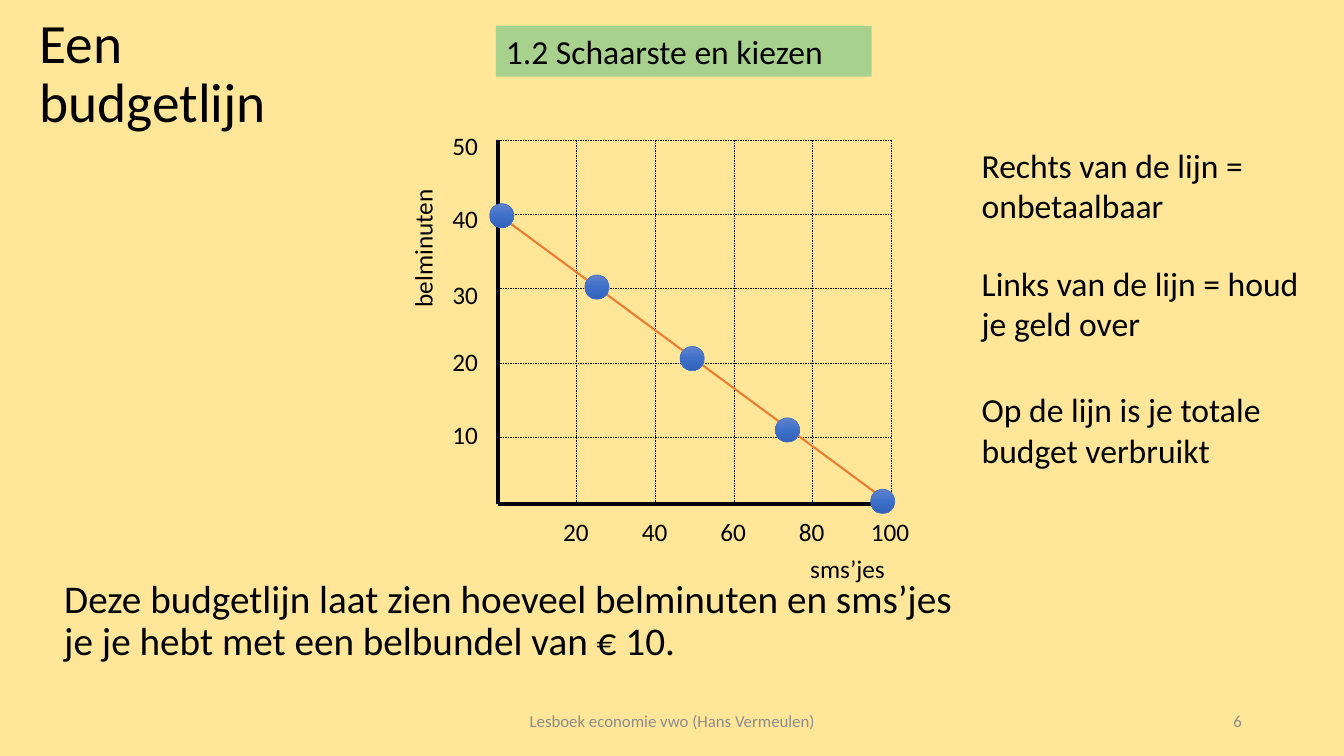
from copy import deepcopy

from lxml.etree import SubElement
from pptx import Presentation
from pptx.dml.color import RGBColor
from pptx.enum.dml import MSO_LINE
from pptx.enum.shapes import MSO_CONNECTOR, MSO_SHAPE
from pptx.enum.text import MSO_ANCHOR, MSO_AUTO_SIZE, PP_ALIGN
from pptx.oxml.ns import qn
from pptx.util import Cm, Pt

BLACK, GREY = "000000", "8C8C8C"

# Plot area of the budget line, in cm
LEFT, RIGHT, TOP, BOTTOM = 12.55, 22.45, 3.53, 12.7
COLUMN, ROW = 1.98, 1.87
LABEL_HEIGHT = 1.02


def colour(value):
    return RGBColor.from_string(value)


def apply(target, values):
    for name, value in values.items():
        setattr(target, name, value)


def write(shape, text, size, hue=BLACK, frame_format=None, para_format=None):
    frame = shape.text_frame
    apply(frame, {"word_wrap": True, "vertical_anchor": MSO_ANCHOR.TOP,
                  "auto_size": MSO_AUTO_SIZE.NONE, **(frame_format or {})})
    para = frame.paragraphs[0]
    apply(para, {"alignment": PP_ALIGN.LEFT, **(para_format or {})})
    span = para.add_run()
    span.text = text
    apply(span.font, {"name": "Calibri", "size": Pt(size)})
    span.font.color.rgb = colour(hue)


def add_text(shapes, place, text, size, hue=BLACK, frame_format=None, para_format=None):
    box = shapes.add_textbox(*map(Cm, place))
    write(box, text, size, hue, frame_format, para_format)
    return box


def add_label(shapes, left, top, width, text):
    return add_text(shapes, (left, top, width, LABEL_HEIGHT), text, 18,
                    frame_format={"word_wrap": False})


def add_line(shapes, start, end, hue, width, dash=None):
    line = shapes.add_connector(MSO_CONNECTOR.STRAIGHT, *map(Cm, start + end))
    line.line.color.rgb = colour(hue)
    apply(line.line, {"width": Pt(width), "dash_style": dash})
    SubElement(line._element.spPr, qn("a:effectLst"))


def add_dot(shapes, left, top):
    dot = shapes.add_shape(MSO_SHAPE.OVAL, *map(Cm, (left, top, 0.61, 0.61)))
    dot.shadow.inherit = False
    dot.line.color.rgb = colour("4472C4")
    dot.line.width = Pt(0.5)
    dot.fill.gradient()
    dot.fill.gradient_angle = 270
    # The gradient starts with two stops; a third is needed
    stops = dot._element.spPr.find(qn("a:gradFill")).find(qn("a:gsLst"))
    stops.append(deepcopy(stops[-1]))
    shades = ((0, "6183CB"), (0.5, "3E70CA"), (1, "3062BB"))
    for stop, (position, hue) in zip(dot.fill.gradient_stops, shades):
        stop.position = position
        stop.color.rgb = colour(hue)


def add_plot(page):
    shapes = page.shapes.add_group_shape().shapes

    # Fine dashed grid
    for step in range(5):
        y = TOP + step * ROW
        x = LEFT + (step + 1) * COLUMN
        add_line(shapes, (LEFT, y), (RIGHT, y), BLACK, 0.25, MSO_LINE.DASH)
        add_line(shapes, (x, TOP), (x, BOTTOM), BLACK, 0.25, MSO_LINE.DASH)

    # Axis titles and values
    add_label(shapes, 20.17, 13.82, 2.41, "sms’jes")
    add_label(shapes, 8.89, 5.72, 3.53, "belminuten").rotation = 270
    for minutes, top in zip(range(50, 0, -10), (3.15, 5, 6.91, 8.59, 10.44)):
        add_label(shapes, 11.15, top, 1.17, str(minutes))
    for step in range(1, 6):
        width = 1.5 if step == 5 else 1.17
        add_label(shapes, LEFT + step * COLUMN - width / 2, 12.88, width, str(20 * step))

    # Budget line and axes
    add_line(shapes, (LEFT, TOP + ROW), (RIGHT, BOTTOM), "ED7D31", 1.5)
    add_line(shapes, (RIGHT, BOTTOM), (LEFT, BOTTOM), BLACK, 3)
    add_line(shapes, (LEFT, TOP), (LEFT, BOTTOM), BLACK, 3)

    # Points on the budget line
    for step in range(5):
        add_dot(page.shapes, 12.34 + 2.4 * step, 5.13 + 1.8 * step)


def add_chapter(page):
    banner = page.shapes.add_shape(MSO_SHAPE.RECTANGLE, *map(Cm, (12.5, 0.66, 9.47, 1.27)))
    banner.shadow.inherit = False
    banner.fill.solid()
    banner.fill.fore_color.rgb = colour("A9D18E")
    banner.line.fill.background()
    write(banner, "1.2 Schaarste en kiezen", 24)


def main():
    deck = Presentation()
    apply(deck, {"slide_width": Cm(33.87), "slide_height": Cm(19.05)})
    page = deck.slides.add_slide(deck.slide_layouts[5])
    page.background.fill.solid()
    page.background.fill.fore_color.rgb = colour("FFE699")
    middle = {"vertical_anchor": MSO_ANCHOR.MIDDLE}

    # Title and explanation
    title = page.shapes.title
    apply(title, {"left": Cm(0.74), "top": Cm(0.91), "width": Cm(8.43), "height": Cm(1.96)})
    write(title, "Een budgetlijn", 39.6, frame_format=middle, para_format={"line_spacing": 0.9})
    add_text(page.shapes, (1.37, 14.48, 23.11, 2.74),
             "Deze budgetlijn laat zien hoeveel belminuten en sms’jes je je hebt "
             "met een belbundel van € 10.", 28,
             para_format={"line_spacing": 0.9, "space_before": Pt(10)})

    add_plot(page)
    add_chapter(page)

    # Remarks beside the plot
    for top, remark in ((3.53, "Rechts van de lijn = onbetaalbaar"),
                        (6.5, "Links van de lijn = houd je geld over"),
                        (9.68, "Op de lijn is je totale budget verbruikt")):
        add_text(page.shapes, (24.49, top, 8.79, 2.31), remark, 24)

    # Footer and page number
    add_text(page.shapes, (11.23, 17.65, 11.43, 1.02), "Lesboek economie vwo (Hans Vermeulen)",
             12, GREY, middle, {"alignment": PP_ALIGN.CENTER})
    add_text(page.shapes, (23.93, 17.65, 7.62, 1.02), "6",
             12, GREY, middle, {"alignment": PP_ALIGN.RIGHT})

    deck.save("out.pptx")


if __name__ == "__main__":
    main()
